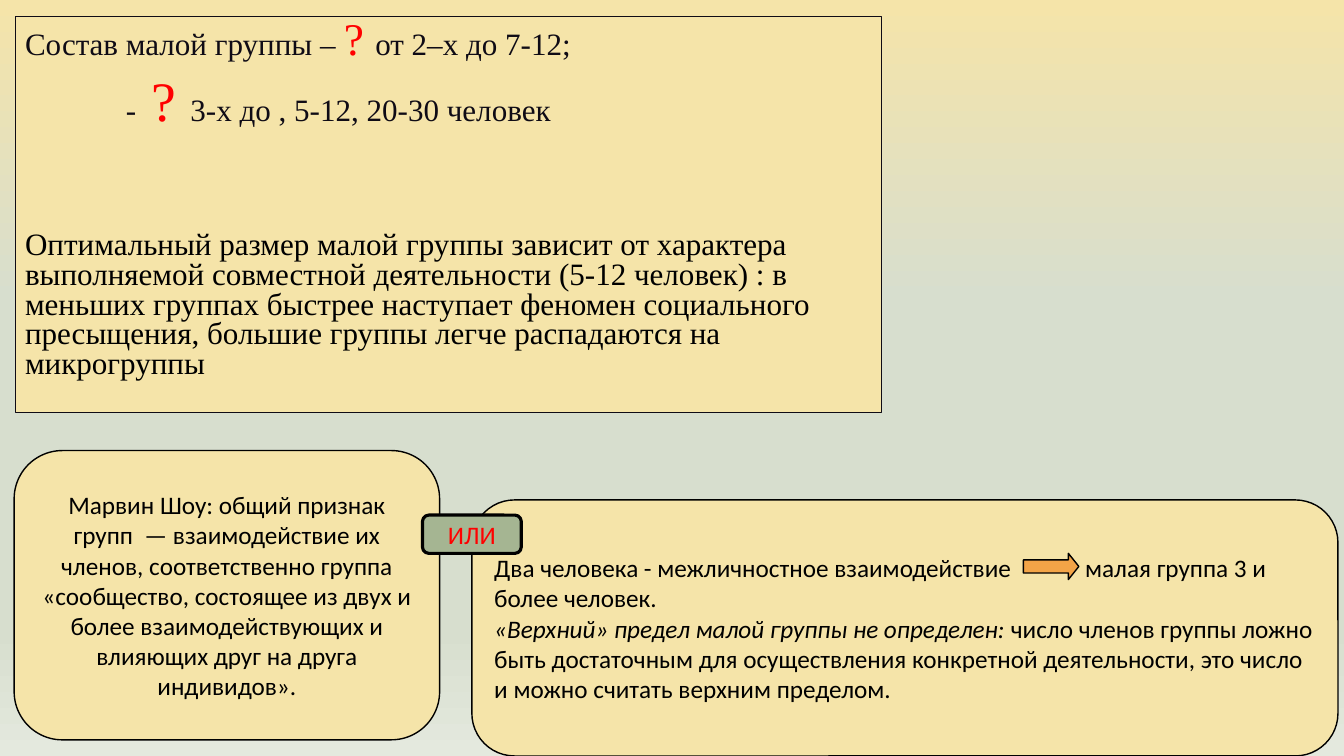
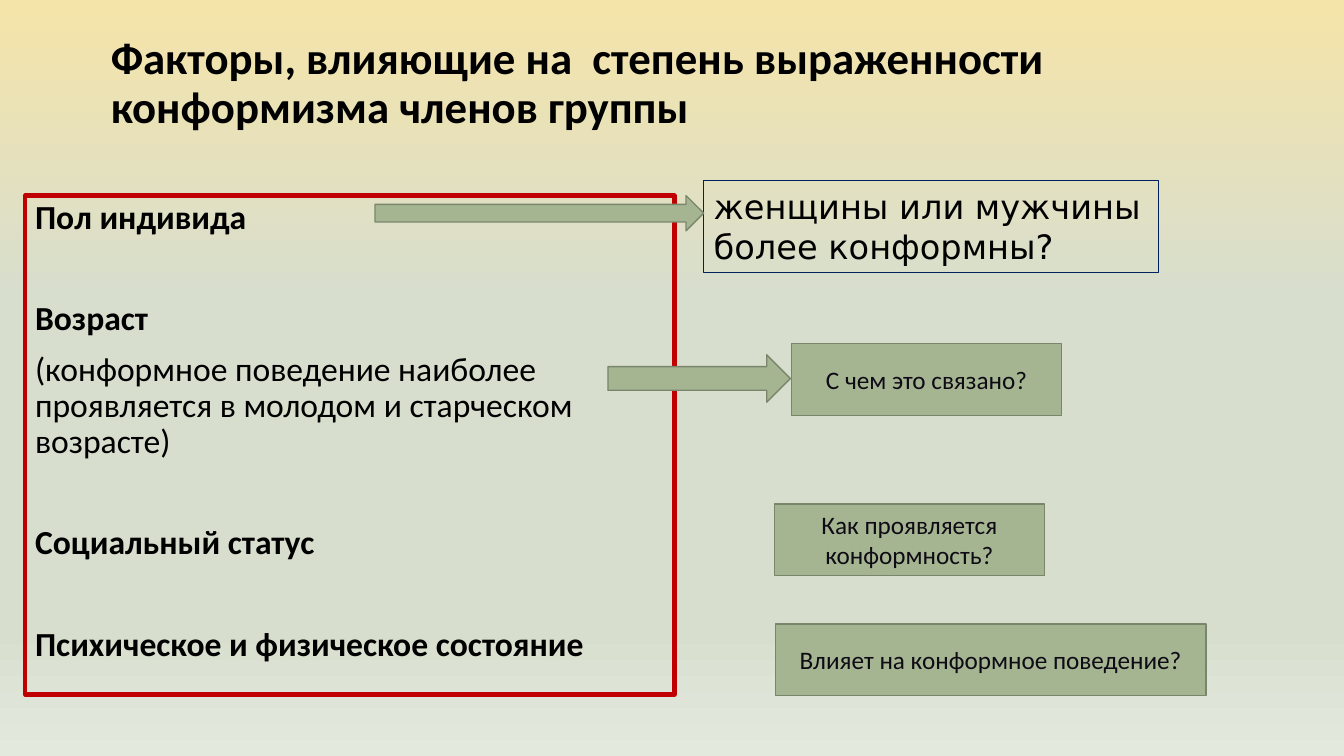
from lxml import etree
from pptx import Presentation
from pptx.dml.color import RGBColor
from pptx.enum import shapes, text
from pptx.oxml import ns
from pptx.util import Inches, Pt

COLOURS = {
    "sand": "F5E4A9", "mist": "D7DECE", "pale": "E4E9DE", "sage": "A5B592",
    "moss": "7A866C", "orange": "F3A447", "ink": "0F0B15", "black": "000000",
    "red": "FF0000", "crimson": "C00000", "navy": "002060",
}
BACKGROUND_STOPS = [(0, "sand"), (40, "mist"), (83, "mist"), (100, "pale")]
RECTANGLE = shapes.MSO_SHAPE.RECTANGLE
ROUNDED = shapes.MSO_SHAPE.ROUNDED_RECTANGLE
ARROW = shapes.MSO_SHAPE.RIGHT_ARROW

# Text styles; a run may override any of the font entries
NOTE = {"size": 18, "font": "Calibri", "colour": "black"}
CENTRED = {**NOTE, "align": "CENTER"}
QUESTION = {**CENTRED, "colour": "ink"}
SIZES = {"size": 22.2, "font": "Times New Roman", "colour": "ink",
         "anchor": "TOP", "spacing": 0.8, "before": 10}
TITLE = {"size": 32, "font": "Calibri", "colour": "black", "bold": True, "spacing": 0.9}
FACTORS = {**TITLE, "size": 24, "anchor": "TOP", "before": 10}
ANSWER = {"size": 24, "font": "DejaVu Sans", "colour": "black", "anchor": "TOP"}

# Content: a paragraph is a list of (text, overrides) runs
GROUP_SIZE = [
    [("Состав малой группы – ", {}), ("? ", {"size": 32.4, "colour": "red"}),
     ("от 2–х до 7-12;", {})],
    [("\t-  ", {}), ("? ", {"size": 39.8, "colour": "red"}),
     ("3-х до , 5-12, 20-30 человек", {})],
    [("Оптимальный размер малой группы зависит от характера выполняемой совместной "
      "деятельности (5-12 человек) : в меньших группах быстрее наступает феномен "
      "социального пресыщения, большие группы легче распадаются на микрогруппы",
      {"colour": "black"})],
]
UPPER_LIMIT = [
    [("Два человека - межличностное взаимодействие\tмалая группа 3 и более человек.", {})],
    [("«Верхний» предел малой группы не определен: ", {"italic": True}),
     ("число членов группы ложно быть достаточным для осуществления конкретной "
      "деятельности, это число и можно считать верхним пределом.", {})],
]
SHAW = [[("Марвин Шоу: общий признак групп  — взаимодействие их членов, соответственно "
          "группа «сообщество, состоящее из двух и более взаимодействующих и влияющих "
          "друг на друга индивидов».", {})]]
FACTOR_LIST = [
    [("Пол индивида", {})],
    [("Возраст", {})],
    [("(конформное поведение наиболее проявляется в молодом и старческом возрасте)",
      {"bold": False})],
    [("Социальный статус", {})],
    [("Психическое и физическое состояние", {})],
]
HEADING = "Факторы, влияющие на  степень выраженности конформизма членов группы"
QUESTIONS = [  # left, top, width, text
    (7.85, 3.41, 2.68, "С чем это связано?"),
    (7.68, 5, 2.68, "Как проявляется конформность?"),
    (7.69, 6.19, 4.27, "Влияет на конформное поведение?"),
]
FACTOR_ARROWS = [(3.72, 1.94, 3.26, 0.35), (6.03, 3.52, 1.81, 0.47)]


def rgb(name):
    return RGBColor.from_string(COLOURS[name])


def set_background(master):
    fill = master.background.fill
    fill.gradient()
    fill.gradient_angle = 270
    stop_list = fill.gradient_stops
    parent = master.element.find(".//" + ns.qn("a:gsLst"))
    for old_stop in list(parent):
        parent.remove(old_stop)
    for position, name in BACKGROUND_STOPS:
        stop = etree.SubElement(parent, ns.qn("a:gs"), pos=str(position * 1000))
        etree.SubElement(stop, ns.qn("a:srgbClr"), val=COLOURS[name])


def write(shape, paragraphs, style, gaps=None, tab=None):
    """Fill a shape with text; gaps maps paragraph numbers to space before."""
    frame = shape.text_frame
    frame.word_wrap = True
    frame.vertical_anchor = getattr(text.MSO_ANCHOR, style.get("anchor", "MIDDLE"))
    for number, runs in enumerate(paragraphs):
        paragraph = frame.add_paragraph() if number else frame.paragraphs[0]
        paragraph.alignment = getattr(text.PP_ALIGN, style.get("align", "LEFT"))
        paragraph.line_spacing = style.get("spacing", 1.0)
        paragraph.space_before = Pt((gaps or {}).get(number, style.get("before", 0)))
        if tab:
            properties = paragraph._p.get_or_add_pPr()
            tabs = etree.SubElement(properties, ns.qn("a:tabLst"))
            etree.SubElement(tabs, ns.qn("a:tab"), pos=str(Inches(tab)), algn="l")
        for content, overrides in runs:
            look = {**style, **overrides}
            run = paragraph.add_run()
            run.text = content
            run.font.size = Pt(look["size"])
            run.font.name = look["font"]
            run.font.color.rgb = rgb(look["colour"])
            run.font.bold = look.get("bold", False)
            run.font.italic = look.get("italic", False)


def add_box(slide, kind, place, fill, line, width=1):
    shape = slide.shapes.add_shape(kind, *map(Inches, place))
    shape.shadow.inherit = False
    if fill:
        shape.fill.solid()
        shape.fill.fore_color.rgb = rgb(fill)
    else:
        shape.fill.background()
    shape.line.color.rgb = rgb(line)
    shape.line.width = Pt(width)
    return shape


def build_size_slide(slide):
    box = add_box(slide, RECTANGLE, (0.15, 0.16, 8.59, 3.93), "sand", "ink", 0.75)
    write(box, GROUP_SIZE, SIZES, gaps={2: 71}, tab=1)
    box = add_box(slide, ROUNDED, (4.68, 4.96, 8.59, 2.54), "sand", "black")
    write(box, UPPER_LIMIT, NOTE, tab=5.86)
    box = add_box(slide, ROUNDED, (0.14, 4.47, 4.22, 2.87), "sand", "black")
    write(box, SHAW, CENTRED)
    box = add_box(slide, ROUNDED, (4.19, 5.11, 0.98, 0.38), "sage", "black", 2.25)
    write(box, [[("ИЛИ", {"colour": "red"})]], CENTRED)
    arrow = add_box(slide, ARROW, (10.15, 5.49, 0.55, 0.26), "orange", "black")
    arrow.adjustments[1] = 0.4


def build_factor_slide(slide):
    title = slide.shapes.add_textbox(*map(Inches, (1, 0.24, 11.35, 1.2)))
    write(title, [[(HEADING, {})]], TITLE)
    box = add_box(slide, RECTANGLE, (0.25, 1.94, 6.44, 4.95), None, "crimson", 3)
    write(box, FACTOR_LIST, FACTORS, gaps={1: 46.4, 3: 46.4, 4: 46.4})
    box = add_box(slide, RECTANGLE, (6.98, 1.79, 4.51, 0.91), None, "navy", 0.75)
    write(box, [[("женщины или мужчины более конформны?", {})]], ANSWER)
    for place in FACTOR_ARROWS:
        add_box(slide, ARROW, place, "sage", "moss")
    for left, top, width, question in QUESTIONS:
        box = add_box(slide, RECTANGLE, (left, top, width, 0.71), "sage", "moss")
        write(box, [[(question, {})]], QUESTION)


def main():
    presentation = Presentation()
    presentation.slide_width = Inches(13.33)
    presentation.slide_height = Inches(7.5)
    set_background(presentation.slide_master)
    for build in (build_size_slide, build_factor_slide):
        build(presentation.slides.add_slide(presentation.slide_layouts[6]))
    presentation.save("out.pptx")


if __name__ == "__main__":
    main()
